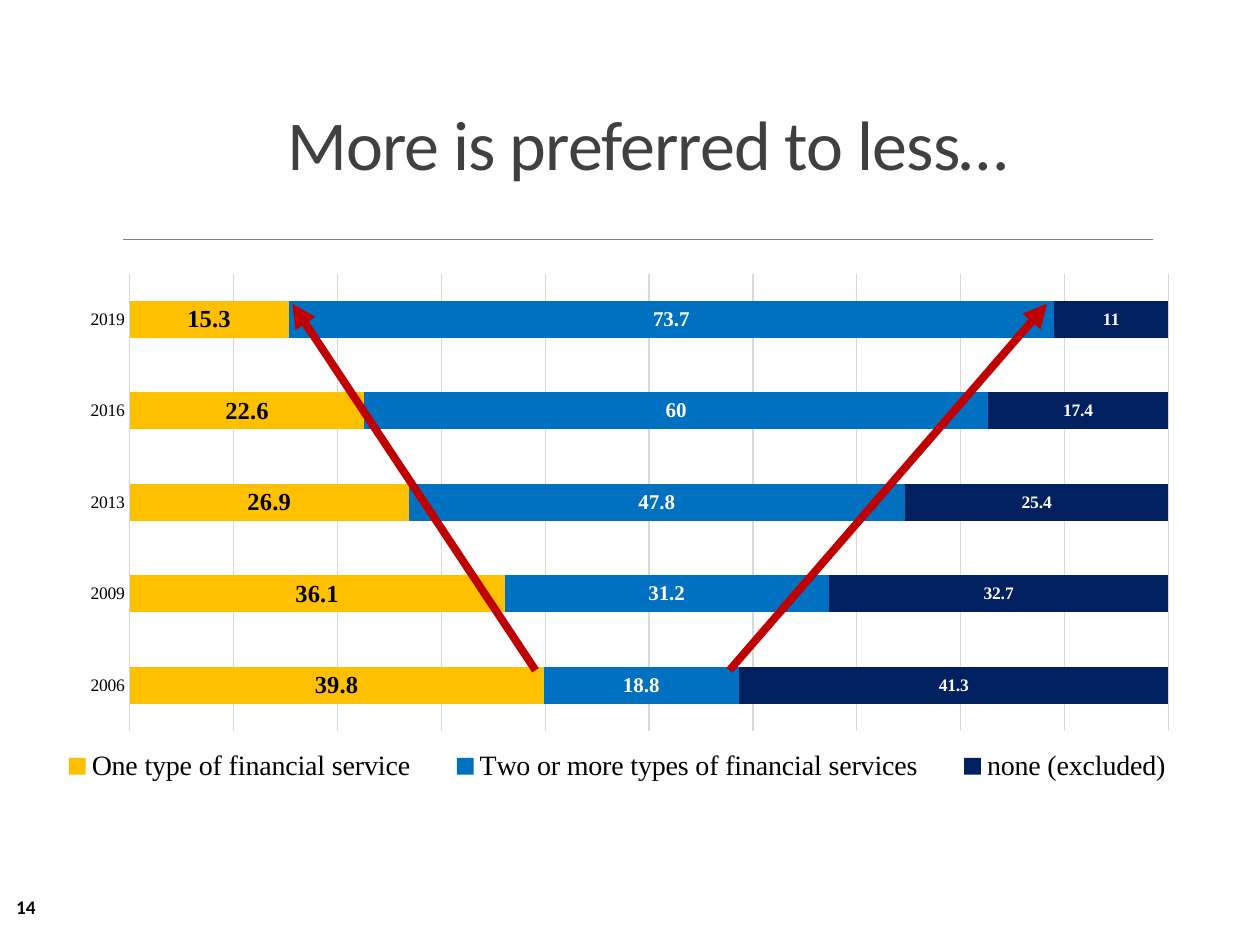
from lxml.etree import SubElement as Sub
from pptx import Presentation
from pptx.chart.data import CategoryChartData as Data
from pptx.dml.color import RGBColor
from pptx.enum.chart import XL_CHART_TYPE as Kind, XL_LABEL_POSITION as Spot
from pptx.enum.chart import XL_LEGEND_POSITION as Side, XL_TICK_LABEL_POSITION as Label
from pptx.enum.chart import XL_TICK_MARK as Tick
from pptx.enum.shapes import MSO_CONNECTOR as Link
from pptx.enum.text import MSO_ANCHOR as Anchor, MSO_AUTO_SIZE as Fit, PP_ALIGN as Align
from pptx.oxml import parse_xml
from pptx.oxml.ns import nsdecls, qn
from pptx.util import Inches, Pt

BLACK = RGBColor(0, 0, 0)
WHITE = RGBColor(255, 255, 255)
DARK = RGBColor(0x40, 0x40, 0x40)
GRAY = RGBColor(0x80, 0x80, 0x80)
PALE = RGBColor(0xD9, 0xD9, 0xD9)
GOLD = RGBColor(0xFF, 0xC0, 0x00)
BLUE = RGBColor(0x00, 0x70, 0xC0)
NAVY = RGBColor(0x00, 0x20, 0x60)
RED = RGBColor(0xC0, 0x00, 0x00)
SANS = "Calibri"
SERIF = "Times New Roman"

YEARS = ["2006", "2009", "2013", "2016", "2019"]
SERIES = [
    ("One type of financial service", (39.8, 36.1, 26.9, 22.6, 15.3), GOLD, 14, BLACK),
    ("Two or more types of financial services", (18.8, 31.2, 47.8, 60, 73.7), BLUE, 12, WHITE),
    ("none (excluded)", (41.3, 32.7, 25.4, 17.4, 11), NAVY, 10, WHITE),
]


def set_font(font, name, size, color, bold=False):
    font.name = name
    font.size = Pt(size)
    font.bold = bold
    font.color.rgb = color


def set_line(line, color, width):
    line.color.rgb = color
    line.width = Pt(width)


def add_title(slide, text):
    title = slide.shapes.title
    title.left, title.top = Inches(0.28), Inches(0.84)
    title.width, title.height = Inches(9.72), Inches(0.68)
    frame = title.text_frame
    frame.text = text
    frame.auto_size = Fit.NONE
    frame.vertical_anchor = Anchor.BOTTOM
    para = frame.paragraphs[0]
    para.alignment = Align.CENTER
    para.line_spacing = 0.85
    set_font(para.font, SANS, 40, DARK)
    para.runs[0]._r.get_or_add_rPr().set("spc", "-50")


def add_line(slide, start, end, color, width, arrow=False):
    ends = [Inches(n) for n in (*start, *end)]
    line = slide.shapes.add_connector(Link.STRAIGHT, *ends)
    set_line(line.line, color, width)
    props = line._element.spPr
    if arrow:
        Sub(line.line._get_or_add_ln(), qn("a:tailEnd"), type="triangle")
    Sub(props, qn("a:effectLst"))


def place(part, spot, x, y, w, h, target=""):
    for old in part.findall(qn("c:layout")):
        part.remove(old)
    part.insert(spot, parse_xml(
        f'<c:layout {nsdecls("c")}><c:manualLayout>{target}'
        '<c:xMode val="edge"/><c:yMode val="edge"/>'
        f'<c:x val="{x}"/><c:y val="{y}"/><c:w val="{w}"/><c:h val="{h}"/>'
        '</c:manualLayout></c:layout>'))


def style_axes(chart):
    cat = chart.category_axis
    cat.major_tick_mark = cat.minor_tick_mark = Tick.NONE
    cat.tick_label_position = Label.NEXT_TO_AXIS
    set_font(cat.tick_labels.font, SERIF, 10, BLACK)
    set_line(cat.format.line, PALE, 0.75)
    val = chart.value_axis
    val.visible = False
    val.major_tick_mark = val.minor_tick_mark = Tick.NONE
    val.has_major_gridlines = True
    set_line(val.major_gridlines.format.line, PALE, 0.75)


def style_bars(plot):
    plot.gap_width = 150
    plot.overlap = 100
    plot.vary_by_categories = False
    for bars, (_, _, fill, size, color) in zip(plot.series, SERIES):
        bars.format.fill.solid()
        bars.format.fill.fore_color.rgb = fill
        labels = bars.data_labels
        labels.show_value = True
        labels.position = Spot.CENTER
        set_font(labels.font, SERIF, size, color, True)


def add_legend(chart):
    chart.has_legend = True
    legend = chart.legend
    legend.position = Side.BOTTOM
    legend.include_in_layout = False
    set_font(legend.font, SERIF, 16, BLACK)
    place(legend._element, 1, 0, 0.91, 0.99, 0.08)


def add_bars(slide):
    data = Data()
    data.categories = YEARS
    for name, vals, *_ in SERIES:
        data.add_series(name, vals)
    box = [Inches(n) for n in (0.25, 1.94, 9.39, 4.36)]
    chart = slide.shapes.add_chart(Kind.BAR_STACKED_100, *box, data).chart
    chart.has_title = False
    set_font(chart.font, SANS, 10, BLACK)
    add_legend(chart)
    style_axes(chart)
    style_bars(chart.plots[0])
    place(chart._chartSpace.chart.plotArea, 0, 0.083, 0.053, 0.878, 0.833,
          '<c:layoutTarget val="inner"/>')


def add_number(slide, text):
    box = slide.shapes.add_textbox(Inches(0.03), Inches(7.06), Inches(0.37), Inches(0.4))
    frame = box.text_frame
    frame.word_wrap = True
    frame.text = text
    set_font(frame.paragraphs[0].font, SANS, 11, BLACK, True)


def main():
    deck = Presentation()
    deck.slide_width, deck.slide_height = Inches(10), Inches(7.5)
    slide = deck.slides.add_slide(deck.slide_layouts[5])
    add_line(slide, (0.98, 1.9), (9.15, 1.9), GRAY, 0.5)
    add_title(slide, "More is preferred to less…")
    add_bars(slide)
    for start, end in ((5.79, 8.31), (4.25, 2.32)):
        add_line(slide, (start, 5.32), (end, 2.41), RED, 4.5, True)
    add_number(slide, "14")
    deck.save("out.pptx")


if __name__ == "__main__":
    main()
